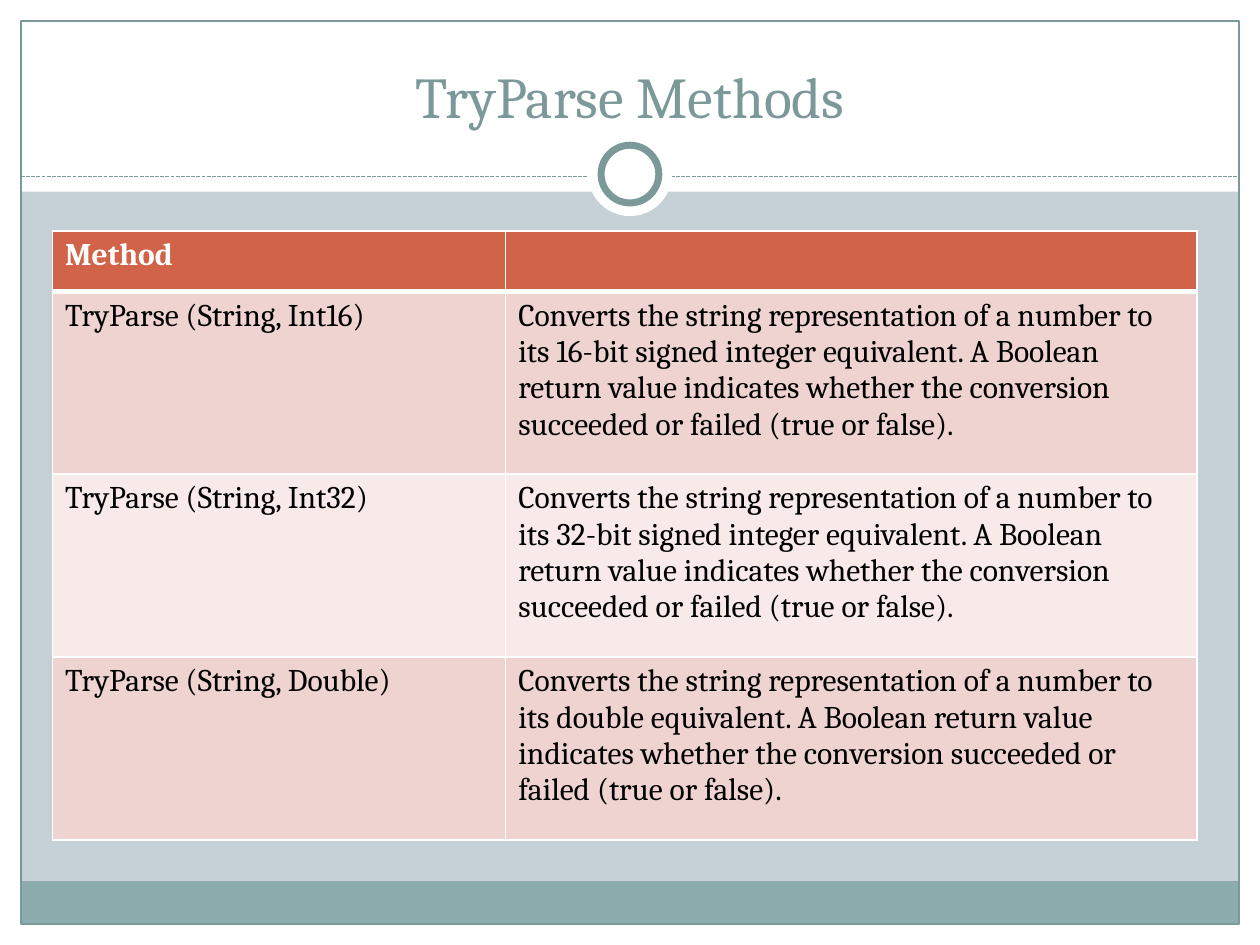
from lxml.etree import SubElement
from pptx import Presentation
from pptx.dml.color import RGBColor
from pptx.enum.dml import MSO_LINE_DASH_STYLE as Dash
from pptx.enum.shapes import MSO_CONNECTOR_TYPE as Connector
from pptx.enum.shapes import MSO_SHAPE as Shape
from pptx.enum.text import MSO_ANCHOR as Anchor
from pptx.enum.text import PP_ALIGN as Align
from pptx.oxml import parse_xml
from pptx.oxml.ns import nsdecls, qn
from pptx.util import Pt

WIDTH, HEIGHT, MARGIN = 720, 540, 12
HEADER_HEIGHT = 109.5
RULE_Y = 100.8
WHITE, BLACK, TEAL, SAGE = "FFFFFF", "000000", "7C999A", "8CADAE"
BACKDROP, RUST = "C5D1D7", "D16349"
BAND_FILLS = ["EED3D0", "F7EAE9"]

DESCRIPTION = (
    "Converts the string representation of a number to its {} equivalent. "
    "A Boolean return value indicates whether the conversion succeeded "
    "or failed (true or false)."
)
METHODS = [
    ("Int16", "16-bit signed integer"),
    ("Int32", "32-bit signed integer"),
    ("Double", "double"),
]


def color(hex_code):
    return RGBColor.from_string(hex_code)


def paint(fill, hex_code):
    fill.solid()
    fill.fore_color.rgb = color(hex_code)


def add_panel(slide, kind, left, top, width, height, fill=None, line=None, weight=0.75):
    panel = slide.shapes.add_shape(kind, Pt(left), Pt(top), Pt(width), Pt(height))
    panel.shadow.inherit = False
    if fill:
        paint(panel.fill, fill)
    else:
        panel.fill.background()
    if line:
        panel.line.color.rgb = color(line)
        panel.line.width = Pt(weight)
    else:
        panel.line.fill.background()


def add_circle(slide, center_y, diameter, **style):
    add_panel(slide, Shape.OVAL, (WIDTH - diameter) / 2, center_y - diameter / 2,
              diameter, diameter, **style)


def add_dashed_rule(slide, y):
    rule = slide.shapes.add_connector(
        Connector.STRAIGHT, Pt(MARGIN), Pt(y), Pt(WIDTH - MARGIN), Pt(y))
    rule.line.color.rgb = color(TEAL)
    rule.line.width = Pt(0.75)
    rule.line.dash_style = Dash.SQUARE_DOT
    SubElement(rule._element.spPr, qn("a:effectLst"))


def write(frame, text, size=18, hue=BLACK, bold=False, align=Align.LEFT):
    paragraph = frame.paragraphs[0]
    paragraph.alignment = align
    run = paragraph.add_run()
    run.text = text
    run.font.name = "Cambria"
    run.font.size = Pt(size)
    run.font.bold = bold
    run.font.color.rgb = color(hue)


def add_title(slide, text):
    title = slide.shapes.add_textbox(Pt(24), Pt(18), Pt(672), Pt(60))
    title.text_frame.word_wrap = True
    title.text_frame.vertical_anchor = Anchor.BOTTOM
    write(title.text_frame, text, size=33, hue=TEAL, align=Align.CENTER)


def set_borders(cell, **weights):
    properties = cell._tc.get_or_add_tcPr()
    for position, side in enumerate("LRTB"):
        border = parse_xml(
            f'<a:ln{side} {nsdecls("a")} w="{Pt(weights.get(side, 1))}">'
            f'<a:solidFill><a:srgbClr val="{WHITE}"/></a:solidFill></a:ln{side}>')
        properties.insert(position, border)


def add_method_table(slide):
    rows = [("Method", "")] + [
        (f"TryParse (String, {name})", DESCRIPTION.format(result))
        for name, result in METHODS
    ]
    table = slide.shapes.add_table(
        len(rows), 2, Pt(30), Pt(132), Pt(654), Pt(348)).table
    for column, width in zip(table.columns, [259, 395]):
        column.width = Pt(width)
    for index, texts in enumerate(rows):
        is_header = index == 0
        table.rows[index].height = Pt(34.5 if is_header else 104.5)
        for cell, text in zip(table.rows[index].cells, texts):
            paint(cell.fill, RUST if is_header else BAND_FILLS[(index - 1) % 2])
            set_borders(cell, B=3 if is_header else 1, T=3 if index == 1 else 1)
            if text:
                write(cell.text_frame, text, bold=is_header,
                      hue=WHITE if is_header else BLACK)


def add_page_frame(slide):
    inner_width, inner_height = WIDTH - 2 * MARGIN, HEIGHT - 2 * MARGIN
    for edge in [
        (0, HEIGHT - MARGIN, WIDTH, MARGIN),
        (0, 0, WIDTH, HEADER_HEIGHT),
        (0, 0, MARGIN, HEIGHT),
        (WIDTH - MARGIN, 0, MARGIN, HEIGHT),
    ]:
        add_panel(slide, Shape.RECTANGLE, *edge, fill=WHITE)
    add_panel(slide, Shape.RECTANGLE, MARGIN, 503.5, inner_width, 24.5, fill=SAGE)
    add_panel(slide, Shape.RECTANGLE, MARGIN, MARGIN, inner_width, inner_height, line=TEAL)
    add_dashed_rule(slide, RULE_Y)
    add_circle(slide, 99.5, 48, fill=WHITE)
    add_circle(slide, 99.5, 33, fill=WHITE, line=TEAL, weight=4)


def main():
    deck = Presentation()
    deck.slide_width, deck.slide_height = Pt(WIDTH), Pt(HEIGHT)
    slide = deck.slides.add_slide(deck.slide_layouts[6])
    paint(slide.background.fill, BACKDROP)
    add_page_frame(slide)
    add_title(slide, "TryParse Methods")
    add_method_table(slide)
    deck.save("out.pptx")


if __name__ == "__main__":
    main()
